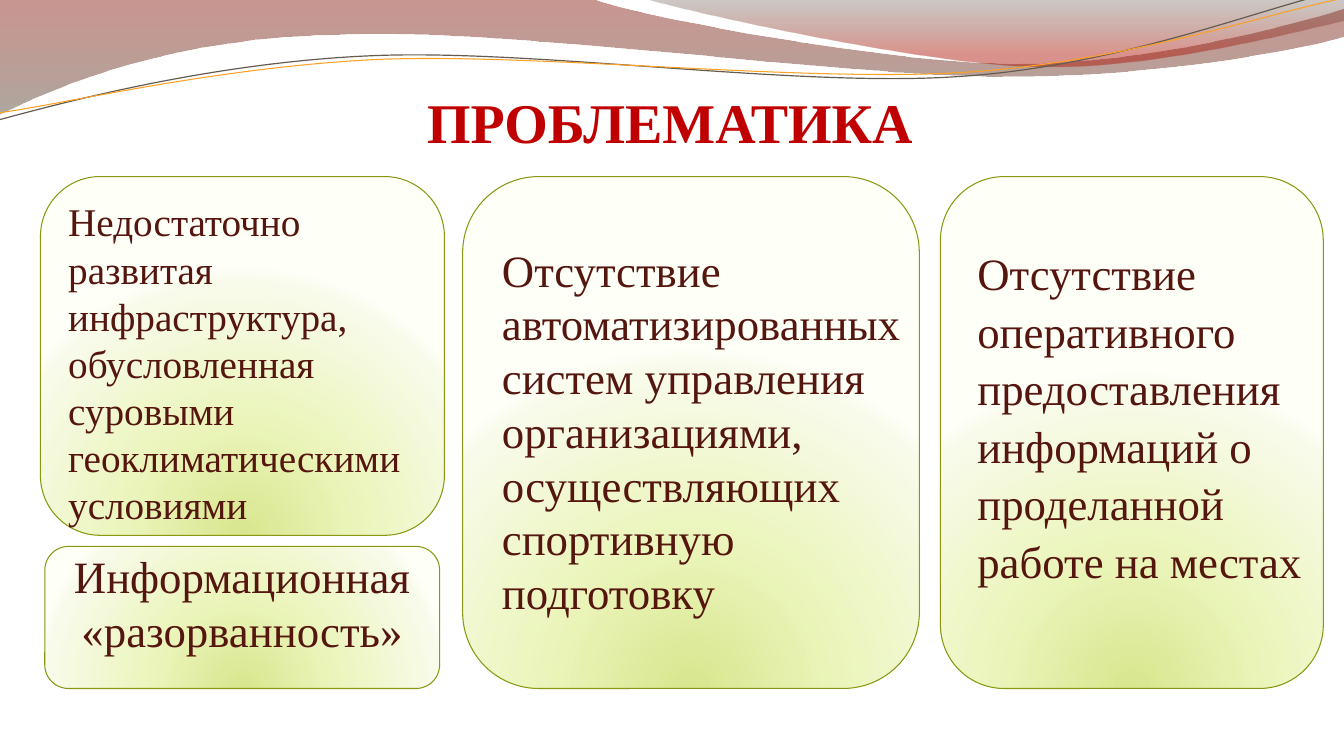
from dataclasses import dataclass

import lxml.etree
import pptx
import pptx.dml.color
import pptx.enum.shapes
import pptx.enum.text
import pptx.oxml.ns
import pptx.util

Cm = pptx.util.Cm
RGBColor = pptx.dml.color.RGBColor
PP_ALIGN = pptx.enum.text.PP_ALIGN
MSO_ANCHOR = pptx.enum.text.MSO_ANCHOR
qn = pptx.oxml.ns.qn

TITLE_RED = RGBColor(0xC0, 0x00, 0x00)
TEXT_BROWN = RGBColor(0x55, 0x16, 0x0F)
CARD_BORDER = RGBColor(0x8A, 0x97, 0x11)
CARD_CORE = RGBColor(0xD8, 0xE6, 0x8E)
CARD_MIDDLE = RGBColor(0xEB, 0xF5, 0xBB)
CARD_PALE = RGBColor(0xF8, 0xFB, 0xEA)
CARD_EDGE = RGBColor(0xFE, 0xFF, 0xF7)
WAVE_RED = RGBColor(0x88, 0x17, 0x0C)
WAVE_BROWN = RGBColor(0x6C, 0x5F, 0x4E)
CREST_GREY = RGBColor(0x56, 0x4D, 0x42)
CREST_RED = RGBColor(0xAF, 0x12, 0x02)
STRAND_GREY = RGBColor(0x64, 0x5C, 0x51)
STRAND_ORANGE = RGBColor(0xFD, 0xA0, 0x23)

FONT = "Times New Roman"
STRAND_TILT = 357.3
LINEAR_DOWN = '<a:lin ang="5400000" scaled="0"/>'
GLOW_FROM_BELOW = (
    '<a:path path="circle">'
    '<a:fillToRect l="50000" t="130000" r="50000" b="-30000"/></a:path>'
)

Point = tuple[float, float]


@dataclass
class Stop:
    position: int
    color: RGBColor
    opacity: int = 100


@dataclass
class Wave:
    start: Point
    segments: list[tuple[Point, ...]]
    stops: list[Stop]


@dataclass
class Strand:
    start: Point
    segments: list[tuple[Point, ...]]
    color: RGBColor
    width: float


@dataclass
class Box:
    left: float
    top: float
    width: float
    height: float


@dataclass
class Caption:
    box: Box
    paragraphs: list[str]
    size: int
    color: RGBColor = TEXT_BROWN
    bold: bool = False
    align: PP_ALIGN = PP_ALIGN.LEFT
    line_spacing: float = 1.0


CARD_STOPS = [
    Stop(0, CARD_CORE), Stop(43, CARD_MIDDLE), Stop(93, CARD_PALE), Stop(100, CARD_EDGE),
]

WAVES = [
    Wave(
        (0, 0),
        [
            ((14.91, -0.03),),
            ((16.1, 0.43), (22.48, 1.6), (25.68, 1.6)),
            ((28.91, 1.6), (32.46, 0.66), (33.86, 0.23)),
            ((33.91, 0.91),),
            ((33.3, 1.12), (29.46, 1.94), (25.25, 1.92)),
            ((21.06, 1.91), (12.93, 0.72), (8.71, 0.87)),
            ((4.37, 0.92), (1.55, 2.12), (-0.03, 2.88)),
        ],
        [Stop(0, WAVE_RED, 45), Stop(100, WAVE_BROWN, 55)],
    ),
    Wave(
        (16.23, -0.03),
        [
            ((17.25, 0.28), (23.09, 1.57), (26.04, 1.66)),
            ((28.98, 1.75), (32.56, 0.81), (33.86, 0.53)),
            ((33.86, 0),),
        ],
        [Stop(0, CREST_GREY, 30), Stop(80, CREST_RED, 45)],
    ),
]

STRANDS = [
    Strand(
        (-0.08, 2.22),
        [
            ((1.6, 1.85), (5.37, 1.03), (9.38, 1.05)),
            ((13.41, 1.06), (20.03, 2.36), (24.1, 2.27)),
            ((28.17, 2.21), (31.84, 0.9), (33.87, 0.55)),
        ],
        STRAND_GREY, 0.85,
    ),
    Strand(
        (-0.04, 2.04),
        [
            ((1.56, 1.9), (5.54, 1.14), (9.61, 1.15)),
            ((13.65, 1.19), (20.19, 2.23), (24.24, 2.17)),
            ((28.3, 2.11), (31.92, 1.06), (33.93, 0.75)),
        ],
        STRAND_ORANGE, 0.75,
    ),
]

CARDS = [
    Box(23.7, 4.45, 9.65, 12.9),
    Box(11.66, 4.45, 11.51, 12.9),
    Box(1.02, 4.45, 10.18, 9.04),
]

CAPTIONS = [
    Caption(Box(6.34, 2.08, 21.08, 1.96), ["ПРОБЛЕМАТИКА"], 40, TITLE_RED, True, PP_ALIGN.CENTER),
    Caption(
        Box(1.47, 4.86, 9.32, 8.64),
        ["Недостаточно развитая инфраструктура, обусловленная",
         "суровыми геоклиматическими условиями"],
        28,
    ),
    Caption(
        Box(24.38, 5.98, 9.07, 9.22),
        ["Отсутствие оперативного предоставления информаций о проделанной работе на местах"],
        32, line_spacing=1.07,
    ),
    Caption(
        Box(12.4, 5.98, 11.23, 9.83),
        ["Отсутствие автоматизированных систем управления организациями, "
         "осуществляющих спортивную подготовку"],
        32,
    ),
]

DISUNITY = Caption(
    Box(1.13, 13.77, 9.95, 3.58), ["Информационная «разорванность»"], 32, align=PP_ALIGN.CENTER
)


def draw_outline(slide, start: Point, segments: list[tuple[Point, ...]], close: bool):
    builder = slide.shapes.build_freeform(Cm(start[0]), Cm(start[1]), scale=1.0)
    ends = [segment[-1] for segment in segments]
    builder.add_line_segments([(Cm(x), Cm(y)) for x, y in ends], close=close)
    outline = builder.convert_to_shape()
    outline.shadow.inherit = False
    straight_lines = list(outline._element.spPr.iter(qn("a:lnTo")))
    for line, segment in zip(straight_lines, segments):
        if len(segment) == 3:
            line.getparent().replace(line, curve_to(segment, outline.left, outline.top))
    return outline


def curve_to(segment: tuple[Point, ...], left: int, top: int):
    points = "".join(f'<a:pt x="{Cm(x) - left}" y="{Cm(y) - top}"/>' for x, y in segment)
    return lxml.etree.fromstring(
        f'<a:cubicBezTo {pptx.oxml.ns.nsdecls("a")}>{points}</a:cubicBezTo>'
    )


def fill_gradient(shape, stops: list[Stop], direction: str) -> None:
    shape.fill.gradient()
    current = shape._element.spPr.find(qn("a:gradFill"))
    stop_xml = "".join(
        f'<a:gs pos="{s.position * 1000}"><a:srgbClr val="{s.color}">'
        f'<a:alpha val="{s.opacity * 1000}"/></a:srgbClr></a:gs>'
        for s in stops
    )
    gradient = lxml.etree.fromstring(
        f'<a:gradFill {pptx.oxml.ns.nsdecls("a")} rotWithShape="1">'
        f"<a:gsLst>{stop_xml}</a:gsLst>{direction}</a:gradFill>"
    )
    current.getparent().replace(current, gradient)


def draw_wave(slide, wave: Wave) -> None:
    outline = draw_outline(slide, wave.start, wave.segments, True)
    fill_gradient(outline, wave.stops, LINEAR_DOWN)
    outline.line.fill.background()


def draw_strand(slide, strand: Strand) -> None:
    outline = draw_outline(slide, strand.start, strand.segments, False)
    outline.rotation = STRAND_TILT
    outline.fill.background()
    outline.line.color.rgb = strand.color
    outline.line.width = pptx.util.Pt(strand.width)


def edges(box: Box) -> tuple[Cm, Cm, Cm, Cm]:
    return Cm(box.left), Cm(box.top), Cm(box.width), Cm(box.height)


def draw_card(slide, box: Box):
    card = slide.shapes.add_shape(pptx.enum.shapes.MSO_SHAPE.ROUNDED_RECTANGLE, *edges(box))
    card.shadow.inherit = False
    fill_gradient(card, CARD_STOPS, GLOW_FROM_BELOW)
    card.line.color.rgb = CARD_BORDER
    card.line.width = pptx.util.Pt(0.75)
    return card


def write(frame, caption: Caption) -> None:
    frame.word_wrap = True
    for index, text in enumerate(caption.paragraphs):
        paragraph = frame.add_paragraph() if index else frame.paragraphs[0]
        paragraph.text = text
        paragraph.alignment = caption.align
        paragraph.line_spacing = caption.line_spacing
        paragraph.font.name = FONT
        paragraph.font.size = pptx.util.Pt(caption.size)
        paragraph.font.bold = caption.bold
        paragraph.font.color.rgb = caption.color


def main() -> None:
    deck = pptx.Presentation()
    deck.slide_width, deck.slide_height = Cm(33.87), Cm(19.05)
    slide = deck.slides.add_slide(deck.slide_layouts[6])
    for wave in WAVES:
        draw_wave(slide, wave)
    for strand in STRANDS:
        draw_strand(slide, strand)
    for card in CARDS:
        draw_card(slide, card)
    for caption in CAPTIONS:
        write(slide.shapes.add_textbox(*edges(caption.box)).text_frame, caption)
    disunity = draw_card(slide, DISUNITY.box).text_frame
    disunity.vertical_anchor = MSO_ANCHOR.MIDDLE
    disunity.margin_bottom = Cm(0.89)
    write(disunity, DISUNITY)
    deck.save("out.pptx")


if __name__ == "__main__":
    main()
